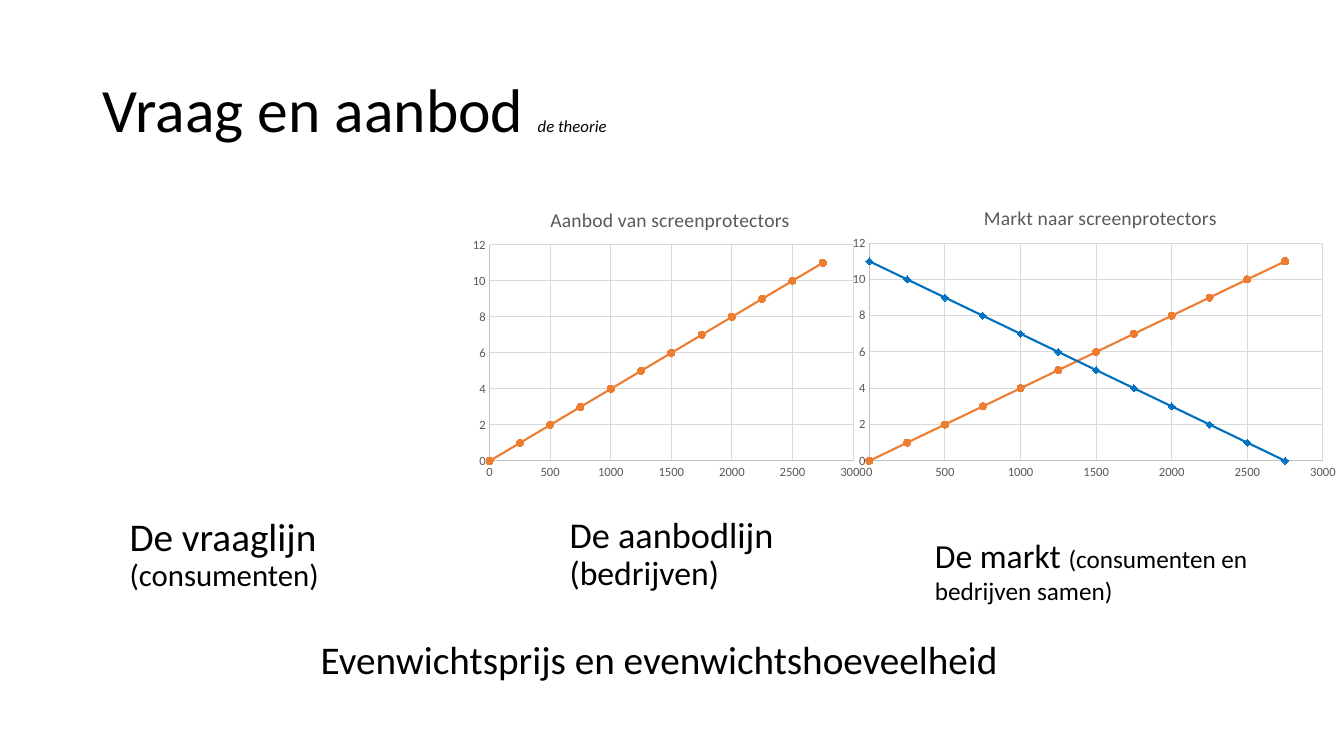
"""Build the slide about supply, demand and the market for screen protectors."""
from dataclasses import dataclass

from lxml.etree import SubElement
from pptx import Presentation
from pptx.chart.data import XyChartData
from pptx.dml.color import RGBColor
from pptx.enum.chart import XL_CHART_TYPE as ChartType
from pptx.enum.chart import XL_MARKER_STYLE as Marker
from pptx.enum.chart import XL_TICK_MARK as Tick
from pptx.enum.text import MSO_ANCHOR as Anchor
from pptx.enum.text import MSO_AUTO_SIZE as AutoSize
from pptx.oxml import parse_xml
from pptx.oxml.ns import nsdecls, qn
from pptx.util import Emu, Pt

FONT = "Calibri"
BLACK = RGBColor(0x00, 0x00, 0x00)
GREY = RGBColor(0x59, 0x59, 0x59)
AXIS = RGBColor(0xBF, 0xBF, 0xBF)
GRID = RGBColor(0xD9, 0xD9, 0xD9)
ORANGE = RGBColor(0xED, 0x7D, 0x31)
BLUE = RGBColor(0x00, 0x70, 0xC0)
PRICES = range(12)
STEP = 250


def px(n: int) -> Emu:
    """Turn px into EMU."""
    return Emu(n * 9525)


@dataclass
class Run:
    """A piece of text in one size."""
    text: str
    size: float
    italic: bool = False


@dataclass
class Label:
    """A text box of one paragraph."""
    box: tuple[int, int, int, int]
    runs: list[Run]
    spacing: float = 1.0
    anchor: Anchor = Anchor.TOP
    grow: bool = False


@dataclass
class Line:
    """A line in a graph, with its price at each quantity."""
    name: str
    prices: list[int]
    color: RGBColor
    marker: Marker


@dataclass
class Graph:
    """A scatter chart with fractions for its title and plot area."""
    box: tuple[int, int, int, int]
    title: str
    title_at: tuple[float, float]
    plot: tuple[float, float, float, float]
    lines: list[Line]


SUPPLY = Line("Aanbod", list(PRICES), ORANGE, Marker.CIRCLE)
DEMAND = Line("Vraag", list(reversed(PRICES)), BLUE, Marker.DIAMOND)

LABELS = [
    Label((88, 38, 1104, 139),
          [Run("Vraag en aanbod ", 44), Run("de theorie", 12, True)],
          0.9, Anchor.MIDDLE),
    Label((114, 488, 215, 111),
          [Run("De vraaglijn ", 28), Run("(consumenten)", 22)], 0.9),
    Label((533, 488, 215, 111),
          [Run("De aanbodlijn ", 25.9), Run("(bedrijven)", 24.1)], 0.9),
    Label((881, 505, 360, 78),
          [Run("De markt ", 24), Run("(consumenten en bedrijven samen)", 18)],
          grow=True),
    Label((296, 600, 765, 55),
          [Run("Evenwichtsprijs en evenwichtshoeveelheid", 28)], grow=True),
]

GRAPHS = [
    Graph((443, 176, 389, 286), "Aanbod van screenprotectors",
          (0.2, 0.06), (0.06, 0.2, 0.89, 0.72), [SUPPLY]),
    Graph((804, 174, 480, 288), "Markt naar screenprotectors",
          (0.27, 0.06), (0.05, 0.2, 0.9, 0.72), [DEMAND, SUPPLY]),
]


def add_label(slide, label: Label) -> None:
    """Add a text box with its runs."""
    tf = slide.shapes.add_textbox(*map(px, label.box)).text_frame
    tf.word_wrap = True
    tf.vertical_anchor = label.anchor
    tf.auto_size = AutoSize.SHAPE_TO_FIT_TEXT if label.grow else AutoSize.NONE
    p = tf.paragraphs[0]
    p.line_spacing = label.spacing
    p.font.name = FONT
    p.font.color.rgb = BLACK
    for run in label.runs:
        r = p.add_run()
        r.text = run.text
        r.font.size = Pt(run.size)
        if run.italic:
            r.font.italic = True


def set_layout(parent, index: int, fractions: tuple[float, ...]) -> None:
    """Place a chart part by fractions of the chart."""
    for old in parent.findall(qn("c:layout")):
        parent.remove(old)
    layout = parse_xml(f"<c:layout {nsdecls('c')}><c:manualLayout/></c:layout>")
    manual = layout[0]
    if len(fractions) == 4:
        SubElement(manual, qn("c:layoutTarget")).set("val", "inner")
    for tag in ("xMode", "yMode"):
        SubElement(manual, qn(f"c:{tag}")).set("val", "edge")
    for tag, value in zip("xywh", fractions):
        SubElement(manual, qn(f"c:{tag}")).set("val", str(value))
    parent.insert(index, layout)


def style_axis(axis, top: int, unit: int) -> None:
    """Set the scale, lines and labels of an axis."""
    axis.minimum_scale, axis.maximum_scale, axis.major_unit = 0, top, unit
    axis.major_tick_mark = axis.minor_tick_mark = Tick.NONE
    axis.has_major_gridlines = True
    for fmt, color in ((axis.format, AXIS), (axis.major_gridlines.format, GRID)):
        fmt.line.color.rgb = color
        fmt.line.width = Pt(0.75)
    font = axis.tick_labels.font
    font.name, font.size = FONT, Pt(9)
    font.color.rgb = GREY


def add_graph(slide, graph: Graph) -> None:
    """Add a scatter chart with its lines."""
    data = XyChartData()
    for line in graph.lines:
        series = data.add_series(line.name)
        for i, price in enumerate(line.prices):
            series.add_data_point(i * STEP, price)
    chart = slide.shapes.add_chart(
        ChartType.XY_SCATTER_LINES, *map(px, graph.box), data).chart
    chart.has_legend = False
    chart.font.name, chart.font.size = FONT, Pt(10)
    chart.font.color.rgb = BLACK
    chart.has_title = True
    p = chart.chart_title.text_frame.paragraphs[0]
    p.text = graph.title
    p.font.name, p.font.size, p.font.bold = FONT, Pt(14), False
    p.font.color.rgb = GREY
    set_layout(chart.chart_title._element, 1, graph.title_at)
    set_layout(chart._chartSpace.chart.plotArea, 0, graph.plot)
    style_axis(chart.category_axis, 3000, 500)
    style_axis(chart.value_axis, 12, 2)
    plot = chart.plots[0]
    plot.vary_by_categories = False
    for line, series in zip(graph.lines, plot.series):
        series.smooth = False
        series.format.line.color.rgb = line.color
        series.format.line.width = Pt(1.5)
        marker = series.marker
        marker.style, marker.size = line.marker, 5
        marker.format.fill.solid()
        marker.format.fill.fore_color.rgb = line.color
        marker.format.line.color.rgb = line.color


def main() -> None:
    """Build and save the slide."""
    prs = Presentation()
    prs.slide_width, prs.slide_height = px(1280), px(720)
    slide = prs.slides.add_slide(prs.slide_layouts[6])
    for label in LABELS:
        add_label(slide, label)
    for graph in GRAPHS:
        add_graph(slide, graph)
    prs.save("out.pptx")


if __name__ == "__main__":
    main()
